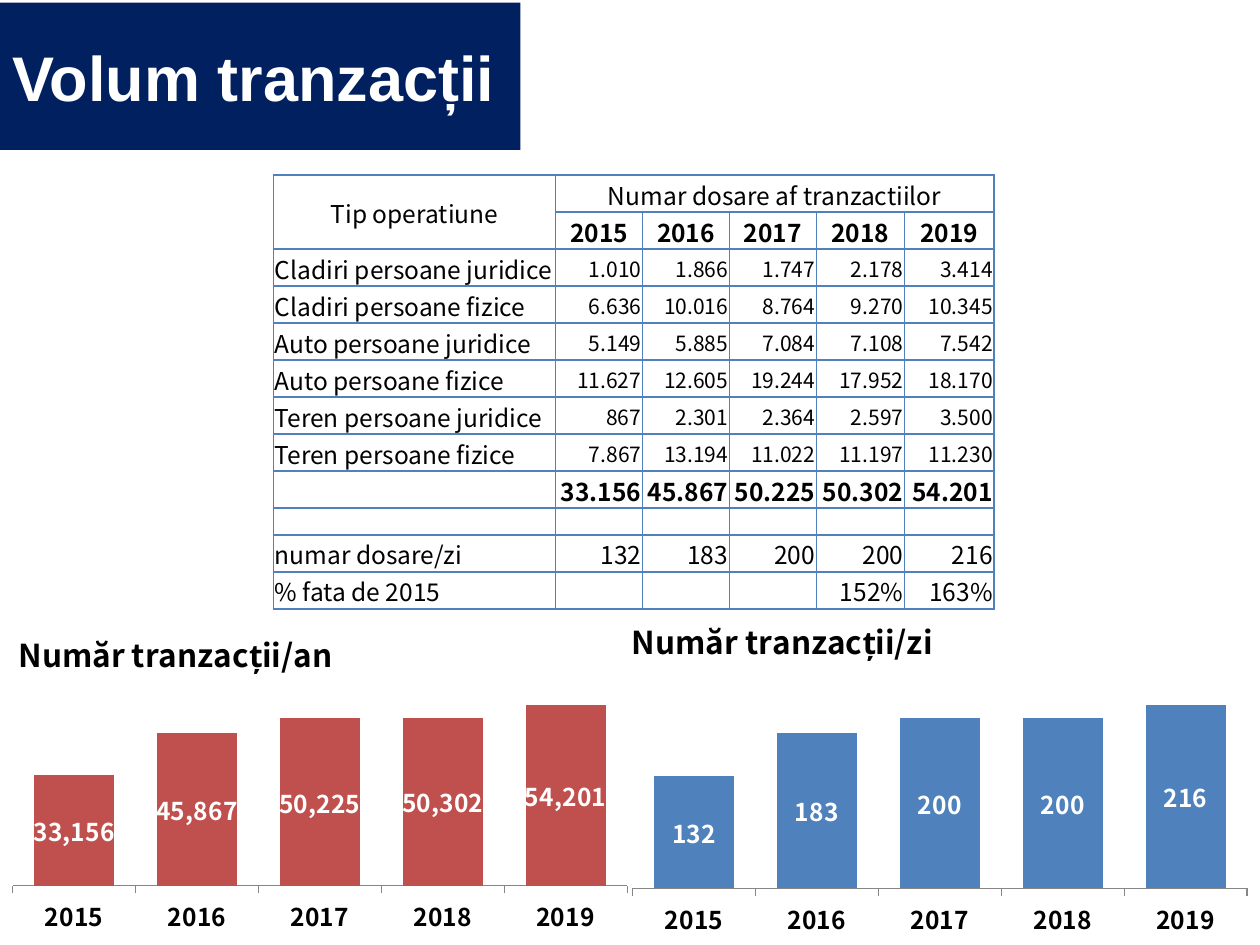
from lxml import etree
from pptx import Presentation
from pptx.chart.data import CategoryChartData
from pptx.dml.color import RGBColor
from pptx.enum.chart import XL_CHART_TYPE as ChartType
from pptx.enum.chart import XL_LABEL_POSITION as LabelPosition
from pptx.enum.chart import XL_TICK_MARK as TickMark
from pptx.enum.text import MSO_ANCHOR as Anchor
from pptx.enum.text import PP_ALIGN as Align
from pptx.oxml import parse_xml
from pptx.oxml.ns import nsdecls, qn
from pptx.util import Inches, Pt

NAVY = RGBColor(0x00, 0x20, 0x60)
BLUE = RGBColor(0x4F, 0x81, 0xBD)
RED = RGBColor(0xC0, 0x50, 0x4D)
GRAY = RGBColor(0x86, 0x86, 0x86)
WHITE = RGBColor(0xFF, 0xFF, 0xFF)
BLACK = RGBColor(0x00, 0x00, 0x00)

YEARS = ["2015", "2016", "2017", "2018", "2019"]
TITLE_ROWS = 2
TOTAL_ROW, BLANK_ROW, DAILY_ROW = 8, 9, 10
TABLE_ROWS = [
    ["Tip operatiune", "Numar dosare af tranzactiilor", "", "", "", ""],
    ["", *YEARS],
    ["Cladiri persoane juridice", "1.010", "1.866", "1.747", "2.178", "3.414"],
    ["Cladiri persoane fizice", "6.636", "10.016", "8.764", "9.270", "10.345"],
    ["Auto persoane juridice", "5.149", "5.885", "7.084", "7.108", "7.542"],
    ["Auto persoane fizice", "11.627", "12.605", "19.244", "17.952", "18.170"],
    ["Teren persoane juridice", "867", "2.301", "2.364", "2.597", "3.500"],
    ["Teren persoane fizice", "7.867", "13.194", "11.022", "11.197", "11.230"],
    ["", "33.156", "45.867", "50.225", "50.302", "54.201"],
    [""] * 6,
    ["numar dosare/zi", "132", "183", "200", "200", "216"],
    ["% fata de 2015", "", "", "", "152%", "163%"],
]
COLUMN_WIDTHS = [2.24, 0.69, 0.69, 0.69, 0.7, 0.71]


def style_font(font, name, size, color=BLACK, bold=False):
    font.name, font.size, font.bold = name, Pt(size), bold
    font.color.rgb = color


def write_text(frame, text, font, size, color=BLACK, bold=False, align=Align.LEFT):
    para = frame.paragraphs[0]
    para.alignment = align
    if text:
        span = para.add_run()
        span.text = text
        style_font(span.font, font, size, color, bold)
    else:
        # The end mark sets the line height of an empty cell.
        para._p.get_or_add_endParaRPr().set("sz", str(size * 100))


def draw_borders(cell, color, points):
    for side in ("lnL", "lnR", "lnT", "lnB"):
        cell._tc.get_or_add_tcPr().append(parse_xml(
            f'<a:{side} {nsdecls("a")} w="{Pt(points)}"><a:solidFill>'
            f'<a:srgbClr val="{color}"/></a:solidFill></a:{side}>'))


def place_chart_part(element, index, inner=False, **fractions):
    """Give a chart title or plot area a fixed place, as fractions of the chart."""
    for old in element.findall(qn("c:layout")):
        element.remove(old)
    layout = parse_xml(f'<c:layout {nsdecls("c")}><c:manualLayout/></c:layout>')
    settings = {"layoutTarget": "inner"} if inner else {}
    settings.update(xMode="edge", yMode="edge", **fractions)
    for tag, value in settings.items():
        etree.SubElement(layout[0], qn(f"c:{tag}")).set("val", str(value))
    element.insert(index, layout)


def cell_format(row, column):
    """Return size, weight and alignment by the cell's role in the table."""
    is_figure = TITLE_ROWS <= row < TOTAL_ROW and column > 0
    size = 12 if is_figure or row == BLANK_ROW else 14
    bold = row in (1, TOTAL_ROW) and column > 0
    if row < TITLE_ROWS:
        align = Align.CENTER
    else:
        align = Align.RIGHT if column else Align.LEFT
    return dict(size=size, bold=bold, align=align)


class SlideBuilder:
    heading_font = "Arial"
    body_font = "Noto Sans CJK KR"

    def __init__(self, deck):
        self.page = deck.slides.add_slide(deck.slide_layouts[5])

    def title(self, text, left, top, width, height):
        box = self.page.shapes.title
        box.left, box.top = Inches(left), Inches(top)
        box.width, box.height = Inches(width), Inches(height)
        box.fill.solid()
        box.fill.fore_color.rgb = NAVY
        box.text_frame.word_wrap = True
        box.text_frame.vertical_anchor = Anchor.MIDDLE
        write_text(box.text_frame, text, self.heading_font, 36, WHITE, bold=True)

    def table(self, rows, widths, left, top, height):
        frame = self.page.shapes.add_table(
            len(rows), len(widths), Inches(left), Inches(top),
            Inches(sum(widths)), Inches(height))
        table = frame.table
        table.first_row = table.horz_banding = False
        for column, width in zip(table.columns, widths):
            column.width = Inches(width)
        for row_index, texts in enumerate(rows):
            table.rows[row_index].height = Inches(0.2)
            for column_index, text in enumerate(texts):
                cell = table.cell(row_index, column_index)
                cell.margin_left = cell.margin_right = cell.margin_top = Inches(0.01)
                cell.margin_bottom = 0
                at_bottom = row_index == DAILY_ROW and column_index > 0
                cell.vertical_anchor = Anchor.BOTTOM if at_bottom else Anchor.MIDDLE
                draw_borders(cell, BLUE, 1)
                cell.fill.background()
                write_text(cell.text_frame, text, self.body_font,
                           **cell_format(row_index, column_index))
        table.cell(0, 0).merge(table.cell(1, 0))
        table.cell(0, 1).merge(table.cell(0, len(widths) - 1))
        frame.height = Inches(height)

    def column_chart(self, title, values, color, place, maximum, number_format,
                     title_place, plot_place):
        data = CategoryChartData(number_format=number_format)
        data.categories = YEARS
        data.add_series("Series 1", values)
        chart = self.page.shapes.add_chart(
            ChartType.COLUMN_CLUSTERED, *map(Inches, place), data).chart
        style_font(chart.font, self.body_font, 10)
        chart.has_legend = False

        chart.has_title = True
        write_text(chart.chart_title.text_frame, title, self.body_font, 18,
                   bold=True)
        heading = chart.chart_title._element
        place_chart_part(heading, 1, **title_place)
        heading.find(qn("c:overlay")).set("val", "1")
        place_chart_part(chart._chartSpace.chart.plotArea, 0, inner=True, **plot_place)

        value_axis = chart.value_axis
        value_axis.visible = value_axis.has_major_gridlines = False
        value_axis.minimum_scale, value_axis.maximum_scale = 0, maximum
        value_axis.tick_labels.number_format = number_format
        value_axis.tick_labels.number_format_is_linked = False
        category_axis = chart.category_axis
        category_axis.major_tick_mark = TickMark.OUTSIDE
        category_axis.format.line.color.rgb = GRAY
        style_font(category_axis.tick_labels.font, self.body_font, 14, bold=True)

        plot = chart.plots[0]
        plot.gap_width, plot.vary_by_categories = 54, False
        series = plot.series[0]
        series.format.fill.solid()
        series.format.fill.fore_color.rgb = color
        labels = series.data_labels
        labels.show_value, labels.position = True, LabelPosition.CENTER
        labels.number_format, labels.number_format_is_linked = number_format, False
        style_font(labels.font, self.body_font, 14, WHITE, bold=True)


def main():
    deck = Presentation()
    deck.slide_width, deck.slide_height = Inches(10), Inches(7.5)
    builder = SlideBuilder(deck)
    builder.title("Volum tranzacții", 0, 0.02, 4.13, 1.17)
    builder.table(TABLE_ROWS, COLUMN_WIDTHS, 2.17, 1.39, 2.9)
    builder.column_chart(
        "Număr tranzacții/an", [33156, 45867, 50225, 50302, 54201], RED,
        place=(0, 4.77, 5.08, 2.69), maximum=60000, number_format="#,##0",
        title_place=dict(x=0.02, y=0.06),
        plot_place=dict(x=0.02, y=0.25, w=0.96, h=0.59))
    builder.column_chart(
        "Număr tranzacții/zi", [132, 183, 200, 200, 216], BLUE,
        place=(4.92, 4.69, 5.08, 2.81), maximum=250, number_format="0",
        title_place=dict(x=0.01, y=0.05),
        plot_place=dict(x=0.02, y=0.24, w=0.96, h=0.6))
    deck.save("out.pptx")


if __name__ == "__main__":
    main()
